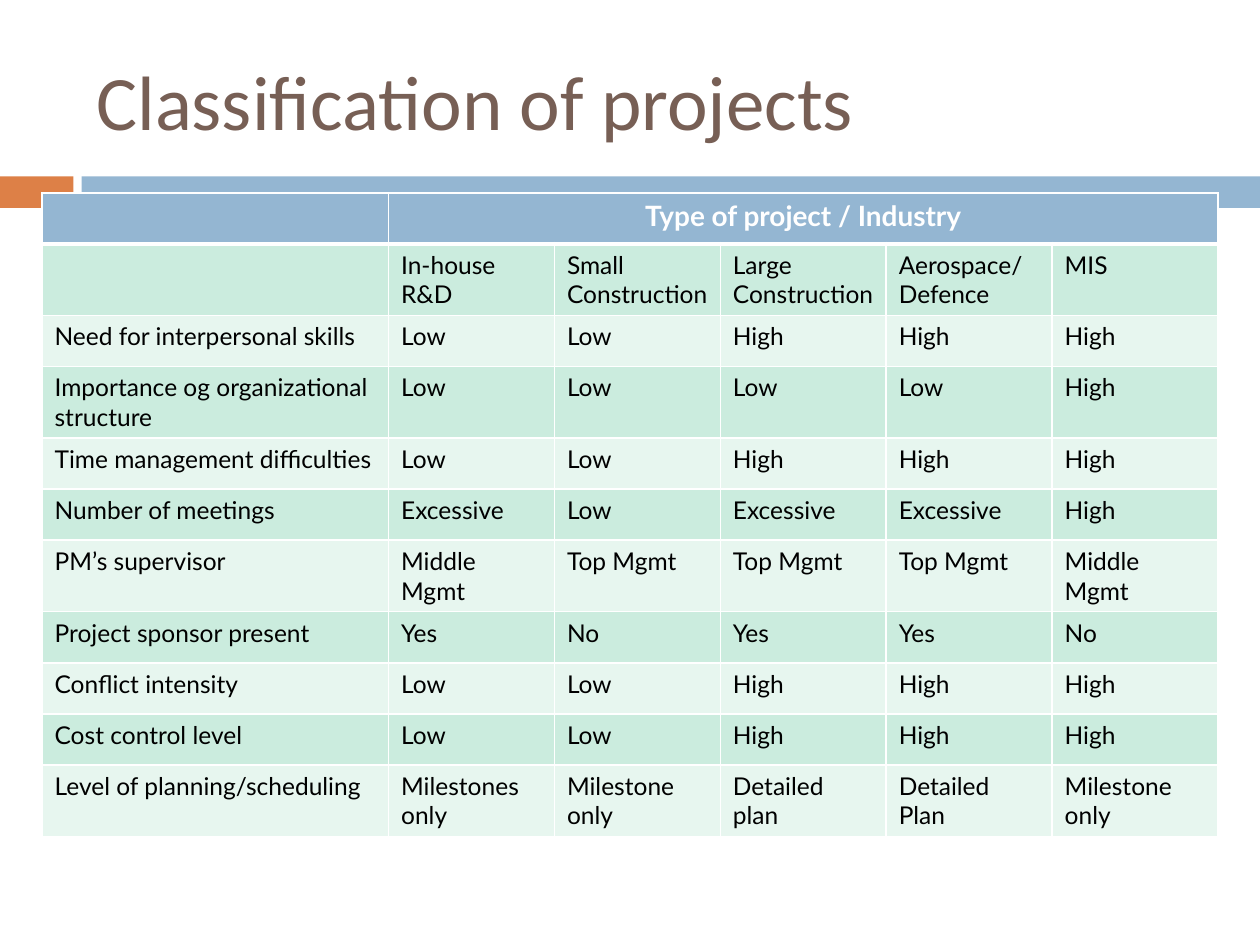
from lxml import etree
from pptx import Presentation
from pptx.dml.color import RGBColor
from pptx.enum.shapes import MSO_SHAPE
from pptx.enum.text import MSO_ANCHOR, PP_ALIGN
from pptx.oxml.ns import qn
from pptx.util import Pt

RECT = MSO_SHAPE.RECTANGLE
MIDDLE = MSO_ANCHOR.MIDDLE
CENTER = PP_ALIGN.CENTER

WHITE = RGBColor(0xFF, 0xFF, 0xFF)
BLACK = RGBColor(0x00, 0x00, 0x00)
ORANGE = RGBColor(0xDD, 0x80, 0x47)
BLUE = RGBColor(0x94, 0xB6, 0xD2)
BROWN = RGBColor(0x77, 0x5F, 0x55)
MINT = RGBColor(0xCB, 0xEC, 0xDE)
PALE = RGBColor(0xE7, 0xF6, 0xEF)

TITLE = {"name": "Calibri", "size": Pt(44), "color": BROWN}
HEAD = {"name": "Lato", "size": Pt(16), "bold": True, "color": WHITE}
BODY = {"name": "Lato", "size": Pt(14), "bold": False, "color": BLACK}

ROWS = [
    ["", "Type of project / Industry", "", "", "", ""],
    ["", "In-house R&D", "Small Construction", "Large Construction",
     "Aerospace/Defence", "MIS"],
    ["Need for interpersonal skills", "Low", "Low", "High", "High", "High"],
    ["Importance og organizational structure",
     "Low", "Low", "Low", "Low", "High"],
    ["Time management difficulties", "Low", "Low", "High", "High", "High"],
    ["Number of meetings",
     "Excessive", "Low", "Excessive", "Excessive", "High"],
    ["PM’s supervisor",
     "Middle Mgmt", "Top Mgmt", "Top Mgmt", "Top Mgmt", "Middle Mgmt"],
    ["Project sponsor present", "Yes", "No", "Yes", "Yes", "No"],
    ["Conflict intensity", "Low", "Low", "High", "High", "High"],
    ["Cost control level", "Low", "Low", "High", "High", "High"],
    ["Level of planning/scheduling", "Milestones only", "Milestone only",
     "Detailed plan", "Detailed Plan", "Milestone only"],
]
WIDTHS = [198] + [94.8] * 5
ROW_H = 29.2


def write(para, text, form):
    run = para.add_run()
    run.text = text
    for key, value in form.items():
        if key == "color":
            run.font.color.rgb = value
        else:
            setattr(run.font, key, value)


def add_bar(slide, left, width, color):
    bar = slide.shapes.add_shape(RECT, Pt(left), Pt(100.8), Pt(width), Pt(18))
    bar.shadow.inherit = False
    bar.fill.solid()
    bar.fill.fore_color.rgb = color
    bar.line.fill.background()


def add_title(slide, text):
    box = slide.shapes.add_textbox(Pt(48), Pt(18), Pt(642), Pt(78))
    frame = box.text_frame
    frame.word_wrap = True
    frame.vertical_anchor = MIDDLE
    write(frame.paragraphs[0], text, TITLE)


def edge(cell, widths):
    """Draw white cell borders; widths maps a side (L, R, T, B) to points."""
    props = cell._tc.get_or_add_tcPr()
    for side, width in widths.items():
        line = etree.SubElement(props, qn(f"a:ln{side}"), w=str(Pt(width)))
        fill = etree.SubElement(line, qn("a:solidFill"))
        etree.SubElement(fill, qn("a:srgbClr"), val=str(WHITE))


def add_grid(slide):
    frame = slide.shapes.add_table(
        len(ROWS), len(WIDTHS), Pt(24), Pt(110.2),
        Pt(sum(WIDTHS)), Pt(ROW_H * len(ROWS)))
    table = frame.table
    table.horz_banding = False
    for col, width in zip(table.columns, WIDTHS):
        col.width = Pt(width)
    for i, texts in enumerate(ROWS):
        table.rows[i].height = Pt(ROW_H)
        color = BLUE if i == 0 else MINT if i % 2 else PALE
        rules = {"L": 1, "R": 1, "T": 3 if i == 1 else 1,
                 "B": 3 if i == 0 else 1}
        for j, text in enumerate(texts):
            cell = table.cell(i, j)
            edge(cell, rules)
            cell.fill.solid()
            cell.fill.fore_color.rgb = color
            if text:
                para = cell.text_frame.paragraphs[0]
                write(para, text, BODY if i else HEAD)
    head = table.cell(0, 1)
    head.merge(table.cell(0, len(WIDTHS) - 1))
    head.text_frame.paragraphs[0].alignment = CENTER


def main():
    deck = Presentation()
    deck.slide_width, deck.slide_height = Pt(720), Pt(540)
    slide = deck.slides.add_slide(deck.slide_layouts[6])
    add_bar(slide, 0, 42, ORANGE)
    add_bar(slide, 46.6, 673.4, BLUE)
    add_title(slide, "Classification of projects")
    add_grid(slide)
    deck.save("out.pptx")


if __name__ == "__main__":
    main()
